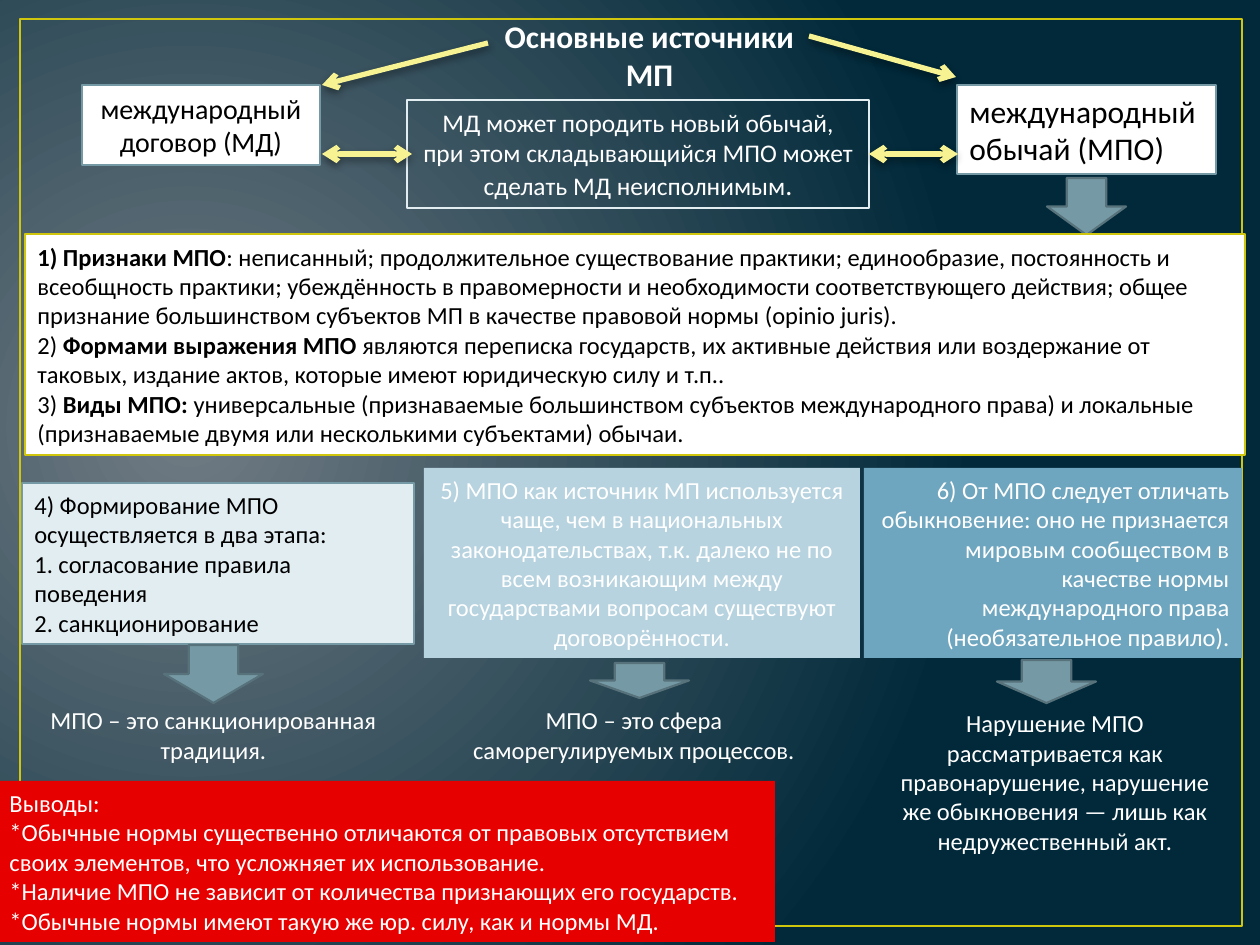
import lxml.etree
import pptx
import pptx.dml.color
import pptx.enum.shapes
import pptx.enum.text
import pptx.oxml
import pptx.oxml.ns
import pptx.util

SCALE = 914400 / 126
KINDS = pptx.enum.shapes.MSO_SHAPE
ALIGN = pptx.enum.text.PP_ALIGN
NS = 'xmlns:a="http://schemas.openxmlformats.org/drawingml/2006/main"'
SHADE = (f'<a:effectLst {NS}><a:outerShdw blurRad="63500" dist="25400" dir="5400000" rotWithShape="0">'
         '<a:srgbClr val="000000"><a:alpha val="43000"/></a:srgbClr></a:outerShdw></a:effectLst>')
GLOW = (f'<a:path {NS} path="circle"><a:fillToRect l="15000" t="50000" r="85000" b="60000"/></a:path>')
BOLD = {"bold": True}


def px(num):
    return pptx.util.Emu(round(num * SCALE))


def tint(code):
    return pptx.dml.color.RGBColor.from_string(code)


class Deck:
    """Holds the style and the current slide, and draws each kind of element."""

    font = {"name": "Calibri"}
    steel, edge, gold, lemon = "759AA5", "57727A", "CFC60D", "F8F392"

    def __init__(self):
        self.show = pptx.Presentation()
        self.show.slide_width, self.show.slide_height = px(1260), px(945)
        self.slide = self.show.slides.add_slide(self.show.slide_layouts[6])

    def back(self, *codes):
        fill = self.slide.background.fill
        fill.gradient()
        for stop, code, place in zip(fill.gradient_stops, codes, (0, 1)):
            stop.color.rgb, stop.position = tint(code), place
        lin = self.slide.element.find(".//" + pptx.oxml.ns.qn("a:lin"))
        lin.getparent().replace(lin, pptx.oxml.parse_xml(GLOW))

    def words(self, shape, paras, align, size, code):
        frame = shape.text_frame
        frame.word_wrap = True
        frame.auto_size = pptx.enum.text.MSO_AUTO_SIZE.SHAPE_TO_FIT_TEXT
        for num, parts in enumerate(paras):
            para = frame.add_paragraph() if num else frame.paragraphs[0]
            para.alignment = align
            for part in parts if isinstance(parts, list) else [parts]:
                words, extra = part if isinstance(part, tuple) else (part, {})
                run = para.add_run()
                run.text = words
                look = {**self.font, "size": pptx.util.Pt(size), **extra}
                for key, value in look.items():
                    setattr(run.font, key, value)
                run.font.color.rgb = tint(code)

    def shape(self, spot, fill=None, line=None, width=1.25, kind=KINDS.RECTANGLE):
        shape = self.slide.shapes.add_shape(kind, *map(px, spot))
        shape.shadow.inherit = False
        for part, code in ((shape.fill, fill), (shape.line.fill, line)):
            if code:
                part.solid()
                part.fore_color.rgb = tint(code)
            else:
                part.background()
        if line:
            shape.line.width = pptx.util.Pt(width)
        return shape

    def box(self, spot, paras, fill=None, line=None, width=1.25, align=ALIGN.LEFT, size=14, code="000000"):
        shape = self.shape(spot, fill, line, width)
        self.words(shape, paras, align, size, code)
        return shape

    def text(self, spot, words, size=14, extra=None):
        shape = self.slide.shapes.add_textbox(*map(px, spot))
        self.words(shape, [[(words, extra or {})]], ALIGN.CENTER, size, "FFFFFF")

    def down(self, *spot):
        self.shape(spot, self.steel, self.edge, kind=KINDS.DOWN_ARROW)

    def line(self, ends, both=False, start=None):
        kind = pptx.enum.shapes.MSO_CONNECTOR.STRAIGHT
        link = self.slide.shapes.add_connector(kind, *map(px, ends))
        link.line.color.rgb = tint(self.lemon)
        link.line.width = pptx.util.Pt(3)
        if start:
            link.begin_connect(*start)
        stroke = link.element.spPr.find(pptx.oxml.ns.qn("a:ln"))
        for tag in ("a:headEnd", "a:tailEnd")[0 if both else 1:]:
            lxml.etree.SubElement(stroke, pptx.oxml.ns.qn(tag), type="arrow")
        link.element.spPr.append(pptx.oxml.parse_xml(SHADE))


def main():
    deck = Deck()
    deck.back("717C84", "01293A")
    deck.shape((20, 19, 1222, 907), line=deck.gold, width=1.5)

    deck.text((466, 11, 367, 89), "Основные источники МП", 18, BOLD)
    deck.line((488, 43, 322, 85))
    deck.line((809, 36, 956, 77))
    deck.box((82, 85, 238, 80), ["международный договор (МД)"], "FFFFFF", deck.steel,
             align=ALIGN.CENTER, size=16)
    deck.box((957, 85, 259, 89), ["международный обычай (МПО)"], "FFFFFF", deck.steel, size=18)
    deck.down(1047, 178, 79, 57)
    note = deck.box((407, 100, 462, 108), [[
        "МД может породить новый обычай, при этом складывающийся МПО может сделать МД неисполнимым",
        (".", {"size": pptx.util.Pt(16)})]],
        line="E2EDF2", width=0.75, align=ALIGN.CENTER, size=14.5, code="FFFFFF")
    deck.line((322, 154, 412, 154), True)
    deck.line((869, 154, 958, 154), True, (note, 3))

    deck.box((22, 483, 392, 161), [
        "4) Формирование МПО осуществляется в два этапа:",
        "1. согласование правила поведения",
        "2. санкционирование"], "E2EDF2", deck.steel)
    deck.box((864, 468, 378, 190), [
        "6) От МПО следует отличать обыкновение: оно не признается мировым сообществом "
        "в качестве нормы международного права (необязательное правило)."],
        "6FA6BF", align=ALIGN.RIGHT, code="FFFFFF")
    deck.box((424, 468, 436, 190), [
        "5) МПО как источник МП используется чаще, чем в национальных законодательствах, "
        "т.к. далеко не по всем возникающим между государствами вопросам существуют договорённости."],
        "B7D3DF", align=ALIGN.CENTER, code="FFFFFF")

    for left, top, high in ((164, 645, 58), (590, 663, 35), (997, 660, 43)):
        deck.down(left, top, 99, high)
    deck.text((34, 699, 359, 111), "МПО – это санкционированная традиция.")
    deck.text((887, 702, 336, 161),
              "Нарушение МПО рассматривается как правонарушение, нарушение же обыкновения — "
              "лишь как недружественный акт.")
    deck.text((433, 699, 402, 72), "МПО – это сфера саморегулируемых процессов.")

    deck.box((-3, 781, 778, 161), [
        "Выводы:",
        "*Обычные нормы существенно отличаются от правовых отсутствием своих элементов, "
        "что усложняет их использование.",
        "*Наличие МПО не зависит от количества признающих его государств.",
        "*Обычные нормы имеют такую же юр. силу, как и нормы МД."], "E60000", code="FFFFFF")
    deck.box((25, 234, 1220, 221), [
        [("1) Признаки МПО", BOLD),
         ": неписанный; продолжительное существование практики; единообразие, постоянность и "
         "всеобщность практики; убеждённость в правомерности и необходимости соответствующего "
         "действия; общее признание большинством субъектов МП в качестве правовой нормы (opinio juris)."],
        ["2) ", ("Формами выражения МПО", BOLD),
         " являются переписка государств, их активные действия или воздержание от таковых, "
         "издание актов, которые имеют юридическую силу и т.п.."],
        ["3) ", ("Виды МПО: ", BOLD),
         "универсальные (признаваемые большинством субъектов международного права) "
         "и локальные (признаваемые двумя или несколькими субъектами) обычаи."]],
        "FFFFFF", deck.gold)
    deck.show.save("out.pptx")


if __name__ == "__main__":
    main()
